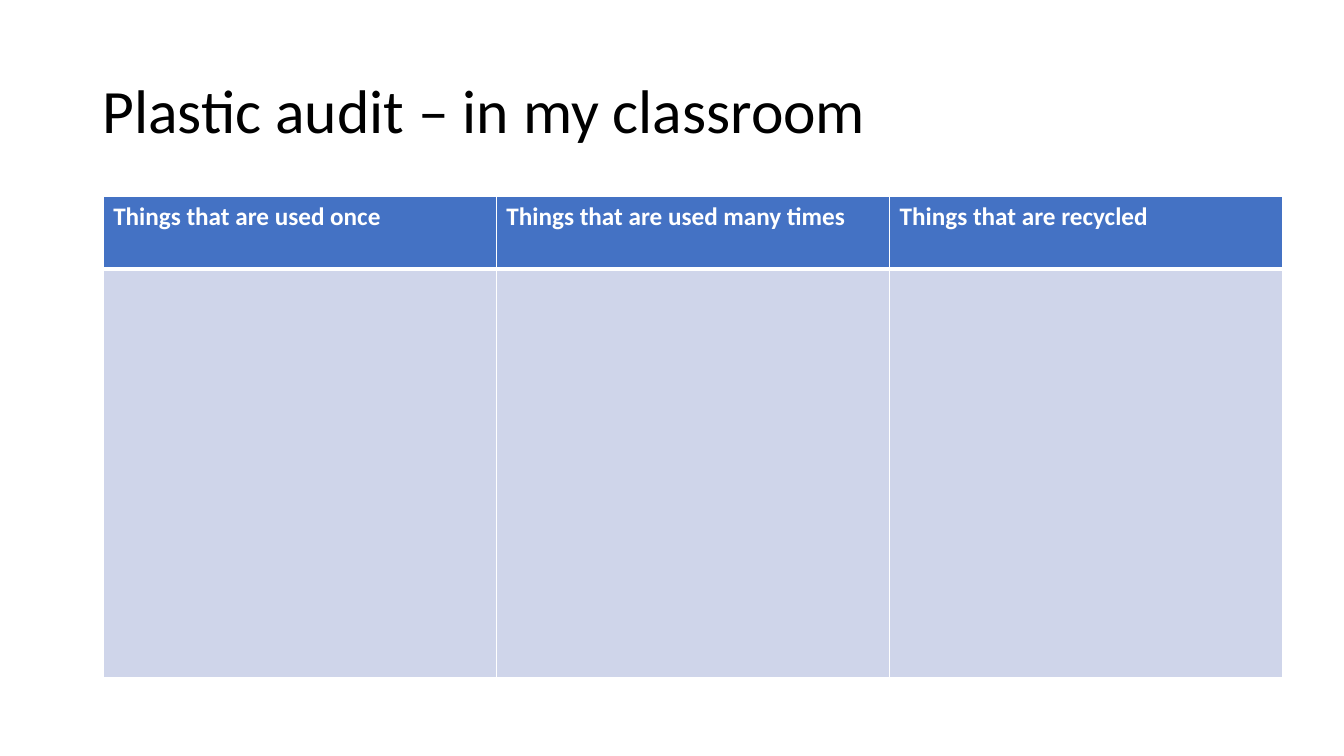
"""Build the classroom plastic audit slide with its three-column table."""
from dataclasses import dataclass

from pptx import Presentation
from pptx.dml.color import RGBColor as Color
from pptx.enum.text import MSO_VERTICAL_ANCHOR as Anchor
from pptx.oxml.ns import qn
from lxml.etree import SubElement
from pptx.util import Cm, Pt


@dataclass(frozen=True)
class Theme:
    font: str = "Calibri"
    black: str = "000000"
    white: str = "FFFFFF"
    header_fill: str = "4472C4"
    body_fill: str = "CFD5EA"
    title_size: int = 44
    header_size: int = 18


def write(paragraph, text, size, color, bold=False):
    run = paragraph.add_run()
    run.text = text
    formats = {"name": theme.font, "size": Pt(size), "bold": bold}
    for name, value in formats.items():
        setattr(run.font, name, value)
    run.font.color.rgb = Color.from_string(color)


def add_borders(cell, widths):
    properties = cell._tc.get_or_add_tcPr()
    for side, width in widths.items():
        line = SubElement(properties, qn(f"a:{side}"), w=str(Pt(width)))
        fill = SubElement(line, qn("a:solidFill"))
        SubElement(fill, qn("a:srgbClr"), val=theme.white)


theme = Theme()
presentation = Presentation()
presentation.slide_width = Cm(33.87)
presentation.slide_height = Cm(19.05)
slide = presentation.slides.add_slide(presentation.slide_layouts[6])

title = slide.shapes.add_textbox(Cm(2.33), Cm(1.01), Cm(29.21), Cm(3.68))
title_frame = title.text_frame
title_formats = {"word_wrap": True, "vertical_anchor": Anchor.MIDDLE}
for name, value in title_formats.items():
    setattr(title_frame, name, value)
title_paragraph = title_frame.paragraphs[0]
title_paragraph.line_spacing = 0.9
write(title_paragraph, "Plastic audit – in my classroom", theme.title_size, theme.black)

headings = [
    "Things that are used once",
    "Things that are used many times",
    "Things that are recycled",
]
row_heights = [Cm(1.83), Cm(10.31)]
column_width = Cm(9.91)
table = slide.shapes.add_table(
    len(row_heights), len(headings), Cm(2.6), Cm(4.94),
    column_width * len(headings), sum(row_heights),
).table
for row, height in zip(table.rows, row_heights):
    row.height = height

row_fills = [theme.header_fill, theme.body_fill]
row_borders = [
    {"lnL": 1, "lnR": 1, "lnT": 1, "lnB": 3},
    {"lnL": 1, "lnR": 1, "lnT": 3, "lnB": 1},
]
for column, heading in enumerate(headings):
    table.columns[column].width = column_width
    for row, (color, borders) in enumerate(zip(row_fills, row_borders)):
        cell = table.cell(row, column)
        add_borders(cell, borders)
        cell.fill.solid()
        cell.fill.fore_color.rgb = Color.from_string(color)
    header_paragraph = table.cell(0, column).text_frame.paragraphs[0]
    write(header_paragraph, heading, theme.header_size, theme.white, bold=True)

presentation.save("out.pptx")
